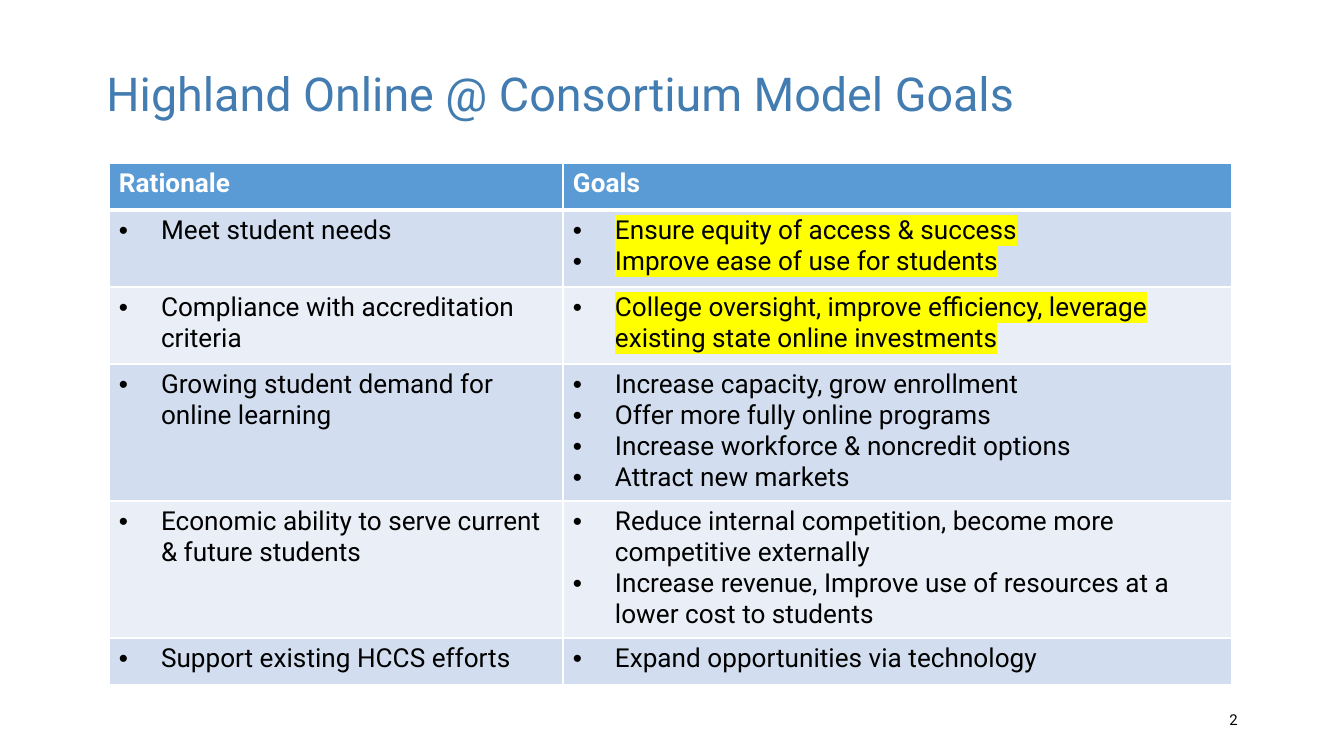
from lxml import etree
from pptx import Presentation
from pptx.dml.color import RGBColor
from pptx.enum.text import MSO_ANCHOR, MSO_AUTO_SIZE, PP_ALIGN
from pptx.oxml.ns import qn
from pptx.util import Emu, Pt

EMU_PER_PX = 6804
SLIDE_SIZE = (1344, 756)
TITLE_BOX = (93, 40, 1158, 113)
TABLE_BOX = (109, 163, 1123, 522)
NUMBER_BOX = (949, 700, 302, 40)

COLUMN_WIDTHS = (454, 669)
ROW_HEIGHTS = (47, 77, 77, 137, 137, 47)
CELL_MARGINS = {"margin_left": 10, "margin_right": 10, "margin_top": 5, "margin_bottom": 5}
BULLET_INDENT = 42

FONT = "Roboto"
TITLE_BLUE = RGBColor(0x42, 0x7C, 0xB1)
HEADER_BLUE = RGBColor(0x5B, 0x9B, 0xD5)
BAND_DARK = RGBColor(0xD2, 0xDE, 0xEF)
BAND_LIGHT = RGBColor(0xEA, 0xEF, 0xF7)
WHITE = RGBColor(0xFF, 0xFF, 0xFF)
BLACK = RGBColor(0, 0, 0)
YELLOW = RGBColor(0xFF, 0xFF, 0)

LEFT, RIGHT = PP_ALIGN.LEFT, PP_ALIGN.RIGHT
MIDDLE = MSO_ANCHOR.MIDDLE
NO_AUTOFIT = MSO_AUTO_SIZE.NONE

TITLE_FORMAT = {"name": FONT, "size": Pt(25), "bold": False}
HEADER_FORMAT = {"name": FONT, "size": Pt(14), "bold": True}
BODY_FORMAT = {"name": FONT, "size": Pt(14), "bold": False}
NUMBER_FORMAT = {"name": FONT, "size": Pt(8), "bold": False}

TITLE = "Highland Online @ Consortium Model Goals"
HEADERS = ("Rationale", "Goals")
# Rationale, goals, whether the goals are highlighted
GOAL_ROWS = (
    ("Meet student needs",
     ("Ensure equity of access & success", "Improve ease of use for students"), True),
    ("Compliance with accreditation criteria",
     ("College oversight, improve efficiency, leverage existing state online investments",), True),
    ("Growing student demand for online learning",
     ("Increase capacity, grow enrollment", "Offer more fully online programs",
      "Increase workforce & noncredit options", "Attract new markets"), False),
    ("Economic ability to serve current & future students",
     ("Reduce internal competition, become more competitive externally",
      "Increase revenue, Improve use of resources at a lower cost to students"), False),
    ("Support existing HCCS efforts", ("Expand opportunities via technology",), False),
)


def px(length):
    return Emu(length * EMU_PER_PX)


def set_attributes(target, values):
    for name, value in values.items():
        setattr(target, name, value)


def add_run(paragraph, text, font_format, color):
    run = paragraph.add_run()
    run.text = text
    set_attributes(run.font, font_format)
    run.font.color.rgb = color
    return run


def add_color(parent, color):
    etree.SubElement(parent, qn("a:srgbClr"), val=str(color))


def highlight(run):
    mark = etree.Element(qn("a:highlight"))
    add_color(mark, YELLOW)
    run.font.color  # the fill must come before the highlight
    run._r.get_or_add_rPr().find(qn("a:solidFill")).addnext(mark)


def add_bullet(paragraph):
    properties = paragraph._p.get_or_add_pPr()
    properties.set("marL", str(px(BULLET_INDENT)))
    properties.set("indent", str(px(-BULLET_INDENT)))
    etree.SubElement(properties, qn("a:buFont"), typeface="Arial")
    etree.SubElement(properties, qn("a:buChar"), char="•")


def format_cell(cell, fill, top_width, bottom_width):
    """Set margins, white borders (widths in points) and fill."""
    set_attributes(cell, {name: px(margin) for name, margin in CELL_MARGINS.items()})
    properties = cell._tc.get_or_add_tcPr()
    for side, width in (("L", 1), ("R", 1), ("T", top_width), ("B", bottom_width)):
        line = etree.SubElement(properties, qn(f"a:ln{side}"), w=str(Pt(width)))
        add_color(etree.SubElement(line, qn("a:solidFill")), WHITE)
    cell.fill.solid()
    cell.fill.fore_color.rgb = fill


def fill_bullets(cell, items, highlighted):
    frame = cell.text_frame
    for index, item in enumerate(items):
        paragraph = frame.add_paragraph() if index else frame.paragraphs[0]
        add_bullet(paragraph)
        run = add_run(paragraph, item, BODY_FORMAT, BLACK)
        if highlighted:
            highlight(run)


def place_text(shape, box, text, font_format, color, alignment):
    """Move a title or text box and give it one line of text."""
    left, top, width, height = map(px, box)
    set_attributes(shape, {"left": left, "top": top, "width": width, "height": height})
    frame = shape.text_frame
    set_attributes(frame, {"word_wrap": True, "auto_size": NO_AUTOFIT,
                           "vertical_anchor": MIDDLE})
    paragraph = frame.paragraphs[0]
    paragraph.alignment = alignment
    add_run(paragraph, text, font_format, color)


def add_goals_table(slide, box):
    table = slide.shapes.add_table(
        len(ROW_HEIGHTS), len(COLUMN_WIDTHS), *map(px, box)).table
    for column, width in zip(table.columns, COLUMN_WIDTHS):
        column.width = px(width)
    for row, height in zip(table.rows, ROW_HEIGHTS):
        row.height = px(height)

    for column, header in enumerate(HEADERS):
        cell = table.cell(0, column)
        format_cell(cell, HEADER_BLUE, 1, 3)
        add_run(cell.text_frame.paragraphs[0], header, HEADER_FORMAT, WHITE)

    for row, (rationale, goals, highlighted) in enumerate(GOAL_ROWS, start=1):
        fill = BAND_DARK if row % 2 else BAND_LIGHT
        contents = (((rationale,), False), (goals, highlighted))
        for column, (items, marked) in enumerate(contents):
            cell = table.cell(row, column)
            format_cell(cell, fill, 3 if row == 1 else 1, 1)
            fill_bullets(cell, items, marked)


def main():
    presentation = Presentation()
    presentation.slide_width, presentation.slide_height = map(px, SLIDE_SIZE)
    slide = presentation.slides.add_slide(presentation.slide_layouts.get_by_name("Title Only"))
    place_text(slide.shapes.title, TITLE_BOX, TITLE, TITLE_FORMAT, TITLE_BLUE, LEFT)
    slide.shapes.title.text_frame.paragraphs[0].line_spacing = 0.9
    add_goals_table(slide, TABLE_BOX)
    number = slide.shapes.add_textbox(*map(px, NUMBER_BOX))
    place_text(number, NUMBER_BOX, "2", NUMBER_FORMAT, BLACK, RIGHT)
    presentation.save("out.pptx")


if __name__ == "__main__":
    main()
